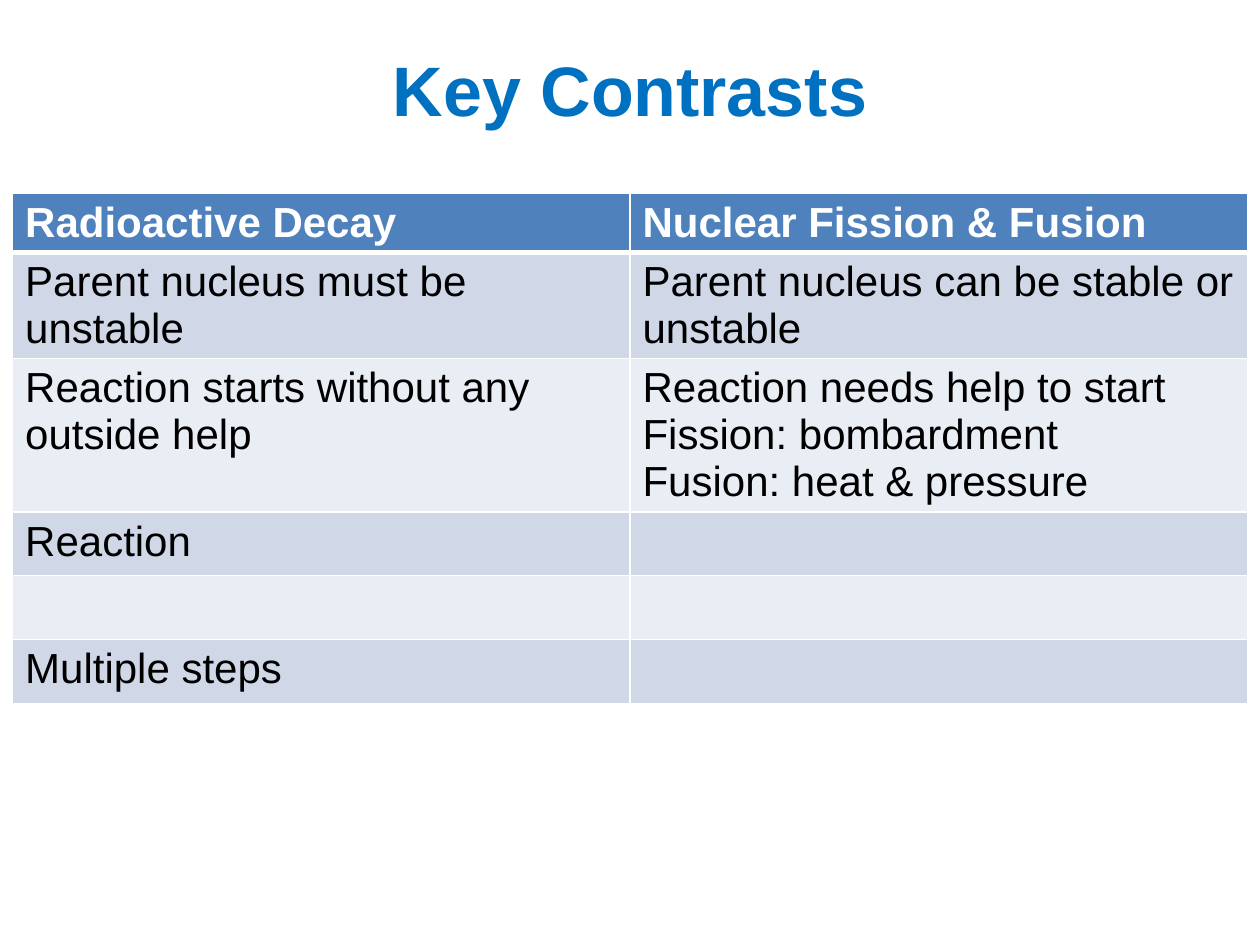
"""Build the Key Contrasts slide comparing decay with fission and fusion."""
from lxml.etree import SubElement
from pptx import Presentation
from pptx.dml.color import RGBColor
from pptx.enum.text import MSO_ANCHOR, PP_ALIGN
from pptx.oxml.ns import qn
from pptx.util import Pt

COLOURS = {
    "title": "0070C0",
    "header": "4F81BD",
    "odd": "D0D8E8",
    "even": "E9EDF4",
    "white": "FFFFFF",
    "black": "000000",
}

CONTRASTS = [
    (["Radioactive Decay"], ["Nuclear Fission & Fusion"]),
    (["Parent nucleus must be unstable"], ["Parent nucleus can be stable or unstable"]),
    (
        ["Reaction starts without any outside help"],
        ["Reaction needs help to start", "Fission: bombardment", "Fusion: heat & pressure"],
    ),
    (["Reaction"], []),
    ([], []),
    (["Multiple steps"], []),
]


class SlideBuilder:
    def __init__(self, page, font="Arial", title_size=40, table_size=24):
        self.page = page
        self.font = font
        self.title_size = title_size
        self.table_size = table_size

    def add_span(self, para, text, size, colour, bold):
        span = para.add_run()
        span.text = text
        span.font.name = self.font
        span.font.size = Pt(size)
        span.font.bold = bold
        span.font.color.rgb = RGBColor.from_string(COLOURS[colour])

    def title(self, text, left, top, width, height):
        box = self.page.shapes.title
        box.left, box.top, box.width, box.height = Pt(left), Pt(top), Pt(width), Pt(height)
        box.text_frame.vertical_anchor = MSO_ANCHOR.MIDDLE
        para = box.text_frame.paragraphs[0]
        para.alignment = PP_ALIGN.CENTER
        self.add_span(para, text, self.title_size, "title", True)

    def border(self, cell, side, width):
        line = SubElement(cell._tc.get_or_add_tcPr(), qn(f"a:ln{side}"), w=str(Pt(width)))
        fill = SubElement(line, qn("a:solidFill"))
        SubElement(fill, qn("a:srgbClr"), val=COLOURS["white"])

    def cell(self, cell, lines, row):
        for side in "LRTB":
            thick = (side == "B" and row == 0) or (side == "T" and row == 1)
            self.border(cell, side, 3 if thick else 1)
        fill = "header" if row == 0 else "odd" if row % 2 else "even"
        cell.fill.solid()
        cell.fill.fore_color.rgb = RGBColor.from_string(COLOURS[fill])
        frame = cell.text_frame
        for index, text in enumerate(lines):
            para = frame.add_paragraph() if index else frame.paragraphs[0]
            self.add_span(para, text, self.table_size, "black" if row else "white", row == 0)
        if not lines:
            size = str(self.table_size * 100)
            SubElement(frame.paragraphs[0]._p, qn("a:endParaRPr"), sz=size)

    def table(self, rows, left, top, width, row_height):
        frame = self.page.shapes.add_table(
            len(rows), len(rows[0]), Pt(left), Pt(top), Pt(width), Pt(row_height * len(rows))
        )
        for row, contents in enumerate(rows):
            frame.table.rows[row].height = Pt(row_height)
            for column, lines in enumerate(contents):
                self.cell(frame.table.cell(row, column), lines, row)


def main():
    deck = Presentation()
    deck.slide_width, deck.slide_height = Pt(720), Pt(540)
    builder = SlideBuilder(deck.slides.add_slide(deck.slide_layouts[5]))
    builder.title("Key Contrasts", 14.4, 21.6, 691.2, 57.6)
    builder.table(CONTRASTS, 7.2, 110.2, 705.6, 29.5)
    deck.save("out.pptx")


if __name__ == "__main__":
    main()
